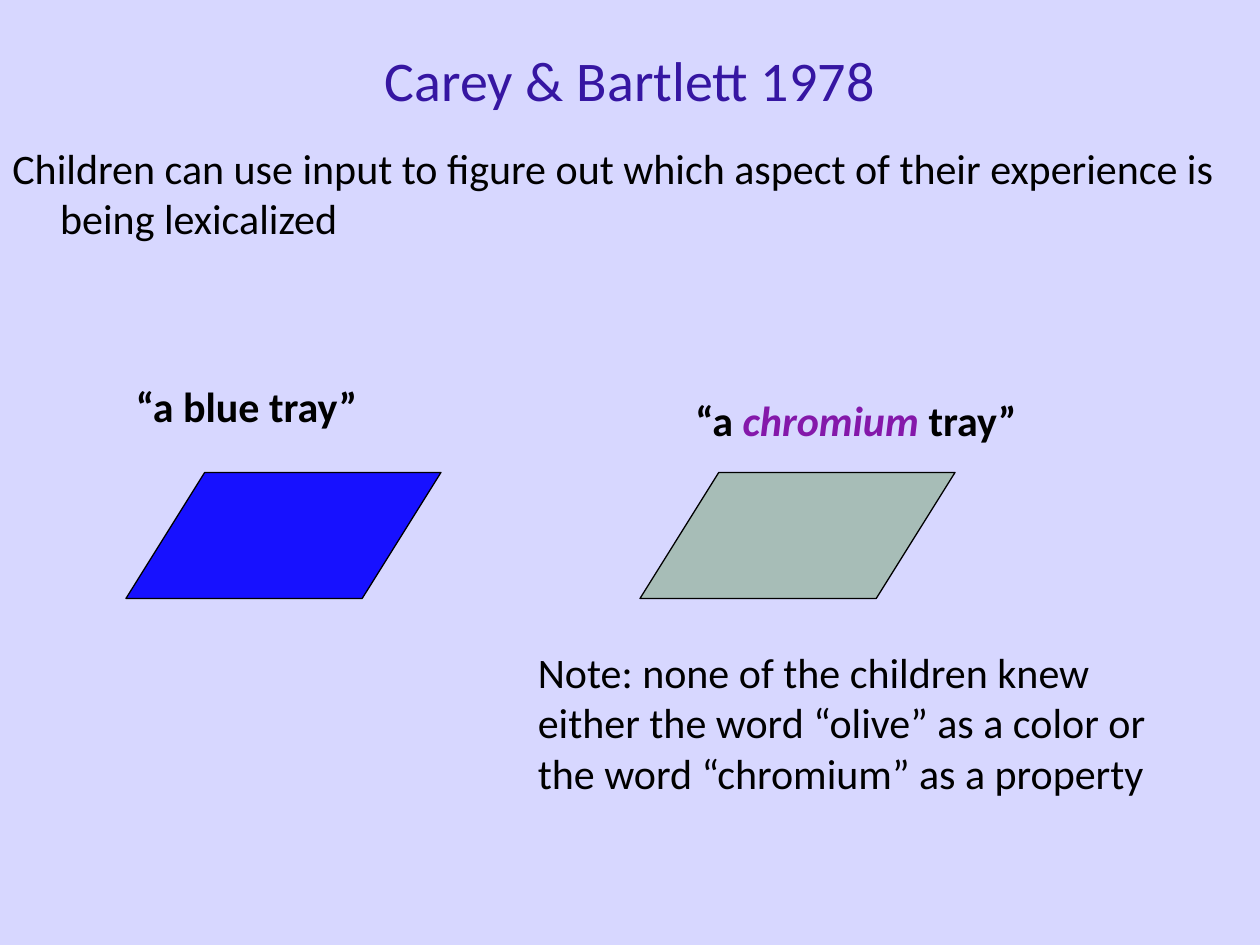
"""Build the Carey & Bartlett slide on word learning."""
from dataclasses import dataclass

from lxml.etree import SubElement
from pptx import Presentation
from pptx.dml.color import RGBColor
from pptx.enum.shapes import MSO_SHAPE as Shape
from pptx.enum.text import MSO_ANCHOR as Anchor, MSO_AUTO_SIZE as Fit, PP_ALIGN as Align
from pptx.oxml.ns import qn
from pptx.util import Inches, Pt


@dataclass
class Tray:
    left: float
    fill: str
    alpha: int = 100


@dataclass
class Note:
    box: tuple[float, float, float, float]
    words: list[str]
    bold: bool = False
    wrap: bool = True
    grow: bool = True


BLACK = "000000"
TRAYS = [Tray(1, "1711FF"), Tray(5.08, "4D8D2D", 34)]
BODY = Note(
    (0, 1.08, 9.83, 1.5),
    ["Children can use input to figure out which aspect of their experience is being lexicalized"],
    grow=False,
)
NOTES = [
    Note((0.98, 2.97, 1.99, 0.5), ["“a blue tray”"], bold=True, wrap=False),
    Note((5.42, 3.08, 2.88, 0.5), ["“a ", "chromium", " tray”"], bold=True, wrap=False),
    Note(
        (4.17, 5.08, 5.08, 1.31),
        ["Note: none of the children knew either the word “olive” as a color "
         "or the word “chromium” as a property"],
    ),
]


def paint(color, code: str) -> None:
    """Set a color from a hex string."""
    color.rgb = RGBColor.from_string(code)


def style(run, size: float, code: str = BLACK, bold: bool = False) -> None:
    """Format one run."""
    run.font.name = "Calibri"
    run.font.size = Pt(size)
    run.font.bold = bold
    paint(run.font.color, code)


def draw_tray(slide, tray: Tray) -> None:
    """Draw one slanted tray."""
    shape = slide.shapes.add_shape(
        Shape.PARALLELOGRAM, Inches(tray.left), Inches(3.75), Inches(2.5), Inches(1))
    shape.adjustments[0] = 0.625
    shape.shadow.inherit = False
    shape.fill.solid()
    paint(shape.fill.fore_color, tray.fill)
    if tray.alpha < 100:
        color = shape.element.spPr.find(qn("a:solidFill"))[0]
        SubElement(color, qn("a:alpha")).set("val", str(tray.alpha * 1000))
    paint(shape.line.color, BLACK)
    shape.line.width = Pt(0.75)


def draw_note(slide, note: Note):
    """Draw one text box and return its paragraph."""
    frame = slide.shapes.add_textbox(*map(Inches, note.box)).text_frame
    frame.word_wrap = note.wrap
    frame.auto_size = Fit.SHAPE_TO_FIT_TEXT if note.grow else Fit.NONE
    para = frame.paragraphs[0]
    for text in note.words:
        run = para.add_run()
        run.text = text
        style(run, 24, bold=note.bold)
        if text == "chromium":
            run.font.italic = True
            paint(run.font.color, "8418AA")
    return para


def draw_title(slide, text: str) -> None:
    """Place and format the title."""
    title = slide.shapes.title
    title.left, title.top, title.width, title.height = map(Inches, (0.75, 0, 8.5, 1.25))
    frame = title.text_frame
    frame.text = text
    frame.vertical_anchor = Anchor.MIDDLE
    para = frame.paragraphs[0]
    para.alignment = Align.CENTER
    style(para.runs[0], 32, "3616A2")


def main() -> None:
    """Build and save the deck."""
    deck = Presentation()
    deck.slide_width, deck.slide_height = Inches(10), Inches(7.5)
    slide = deck.slides.add_slide(deck.slide_layouts[5])
    slide.background.fill.solid()
    paint(slide.background.fill.fore_color, "D7D7FF")
    for tray in TRAYS:
        draw_tray(slide, tray)
    for note in NOTES:
        draw_note(slide, note)
    draw_title(slide, "Carey & Bartlett 1978")
    para = draw_note(slide, BODY)
    para.space_before = Pt(4.8)
    props = para._p.get_or_add_pPr()
    props.set("marL", str(Inches(0.38)))
    props.set("indent", str(Inches(-0.38)))
    deck.save("out.pptx")


if __name__ == "__main__":
    main()
